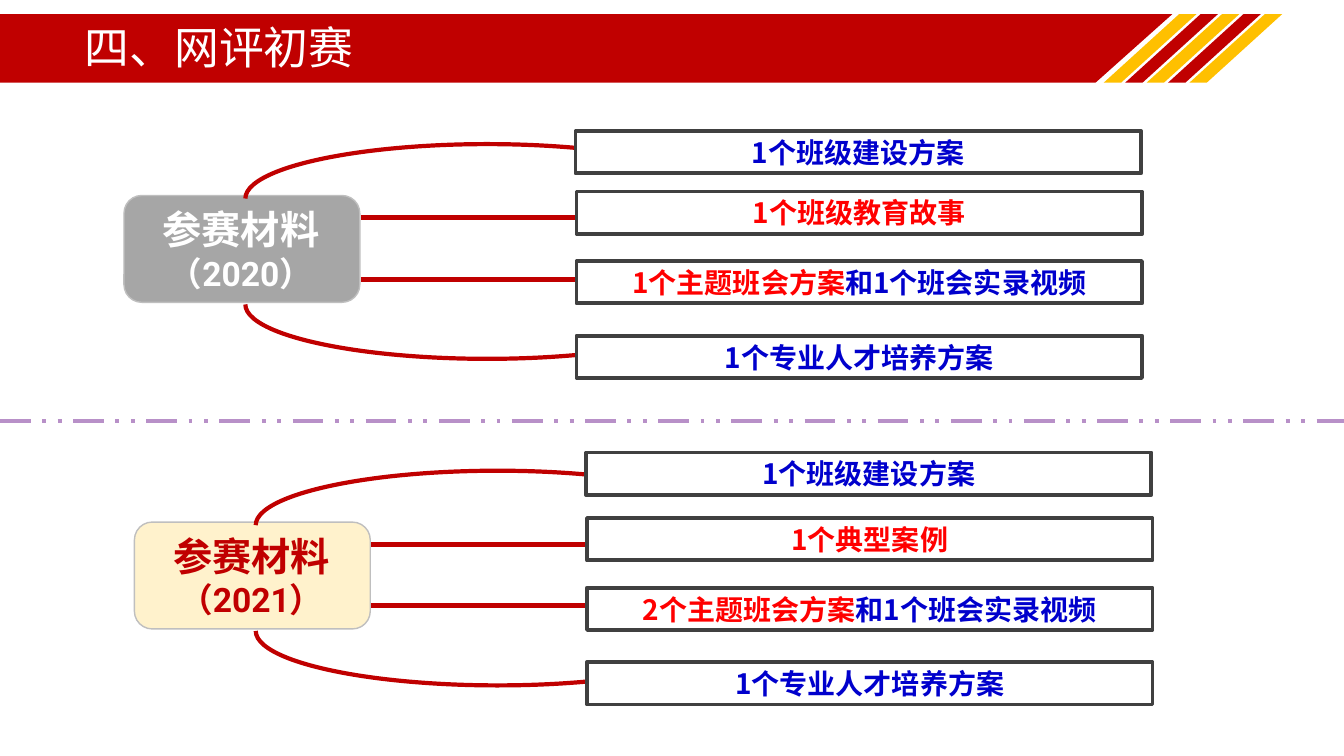
import pptx
import pptx.util
import pptx.dml.color
import pptx.enum.dml
import pptx.enum.shapes
import pptx.enum.text
import pptx.oxml
import pptx.oxml.ns

deck = pptx.Presentation()
deck.slide_width = pptx.util.Inches(13.333)
deck.slide_height = pptx.util.Inches(7.5)
COLS, ROWS = 160, 90
unit = deck.slide_width / COLS
slide = deck.slides.add_slide(deck.slide_layouts[5])
hue = pptx.dml.color.RGBColor.from_string
kinds = pptx.enum.shapes.MSO_SHAPE
align = pptx.enum.text.PP_ALIGN
middle = pptx.enum.text.MSO_ANCHOR.MIDDLE
qn = pptx.oxml.ns.qn

RED, GOLD, WHITE = "C00000", "FFC000", "FFFFFF"
BLUE, BRIGHT, DARK = "0000CC", "FF0000", "404040"
SANS, LATIN = "Noto Sans CJK SC", "Roboto"


def draw(kind, box, fill=None, line=None, width=1):
    shape = slide.shapes.add_shape(kind, *[round(n * unit) for n in box])
    shape.shadow.inherit = False
    if fill:
        shape.fill.solid()
        shape.fill.fore_color.rgb = hue(fill)
    else:
        shape.fill.background()
    if line:
        shape.line.color.rgb = hue(line)
        shape.line.width = pptx.util.Pt(width)
    else:
        shape.line.fill.background()
    return shape


def write(para, text, size, face, color, bold, side):
    para.alignment = side
    run = para.add_run()
    run.text = text
    run.font.size = pptx.util.Pt(size)
    run.font.bold = bold
    run.font.color.rgb = hue(color)
    run.font.name = face
    east = pptx.oxml.parse_xml(
        f'<a:ea {pptx.oxml.ns.nsdecls("a")} typeface="{SANS}"/>')
    run.font._element.append(east)


TOP, HIGH = 1.68, 8.16
bar = draw(kinds.PARALLELOGRAM, (-10.92, TOP, 150.48, HIGH), RED)
bar.adjustments[0] = 1.12
for i in range(5):
    stripe = draw(kinds.PARALLELOGRAM, (131.4 + 2.55 * i, TOP, 11.04, HIGH),
                  (GOLD, RED)[i % 2])
    stripe.adjustments[0] = 1.1

title = slide.shapes.title
title.left, title.top, title.width, title.height = [
    round(n * unit) for n in (8.88, 4.44, 138, 3.12)]
slide.shapes._spTree.append(title._element)
frame = title.text_frame
frame.auto_size = pptx.enum.text.MSO_AUTO_SIZE.NONE
frame.vertical_anchor = middle
frame.word_wrap = True
frame.paragraphs[0].line_spacing = 0.9
write(frame.paragraphs[0], "四、网评初赛", 32, LATIN, WHITE, False, align.LEFT)

VIDEO = ("和1个班会实录视频", BLUE)
PLAN = [("1个班级建设方案", BLUE)]
TRAIN = [("1个专业人才培养方案", BLUE)]
years = [
    (14.76, 23.28, "2020", "A6A6A6", WHITE, -7.68,
     [PLAN, [("1个班级教育故事", BRIGHT)], [("1个主题班会方案", BRIGHT), VIDEO], TRAIN]),
    (16, 62.16, "2021", "FFF2CC", RED, -8.28,
     [PLAN, [("1个典型案例", BRIGHT)], [("2个主题班会方案", BRIGHT), VIDEO], TRAIN]),
]

wires = [(x + 28.2, x + 53.88, y + drop, RED, 3.5, None)
         for x, y, *rest in years for drop in (2.64, 9.96)]
wires.append((0, COLS, 50.16, "B890C8", 2.75,
              pptx.enum.dml.MSO_LINE.DASH_DOT_DOT))
for start, end, y, color, width, dash in wires:
    wire = slide.shapes.add_connector(
        pptx.enum.shapes.MSO_CONNECTOR.STRAIGHT,
        *[round(n * unit) for n in (start, y, end, y)])
    wire.line.color.rgb = hue(color)
    wire.line.width = pptx.util.Pt(width)
    if dash:
        wire.line.dash_style = dash
    wire._element.spPr.append(pptx.oxml.parse_xml(
        f'<a:effectLst {pptx.oxml.ns.nsdecls("a")}/>'))

for x, y, year, fill, ink, first, items in years:
    draw(kinds.ROUNDED_RECTANGLE, (x, y, 28.08, 12.72), fill, "BFBFBF")
    label = slide.shapes.add_textbox(
        *[round(n * unit) for n in (x - 0.12, y + 0.6, 28.08, 11.76)])
    frame = label.text_frame
    frame.word_wrap = True
    write(frame.paragraphs[0], "参赛材料", 28, LATIN, ink, True, align.CENTER)
    write(frame.add_paragraph(), f"（{year}）", 24, LATIN, ink, True, align.CENTER)

    for drop, flips in ((-6.12, ["flipH"]), (6.48, ["flipH", "flipV"])):
        arc = draw(kinds.ARC, (x + 14.45, y + drop, 57.6, 12.96), None, RED, 3)
        arc.adjustments[0] = 126
        arc.adjustments[1] = 0
        for flip in flips:
            arc._element.spPr.find(qn("a:xfrm")).set(flip, "1")

    for drop, parts in zip((first, -0.48, 7.8, 16.68), items):
        left = x + (53.76 if drop == first else 53.88)
        box = draw(kinds.RECTANGLE, (left, y + drop, 67.32, 5.04),
                   None, DARK, 2.75)
        frame = box.text_frame
        frame.word_wrap = True
        frame.vertical_anchor = middle
        for text, color in parts:
            write(frame.paragraphs[0], text, 20, SANS, color, True, align.CENTER)

deck.save("out.pptx")
